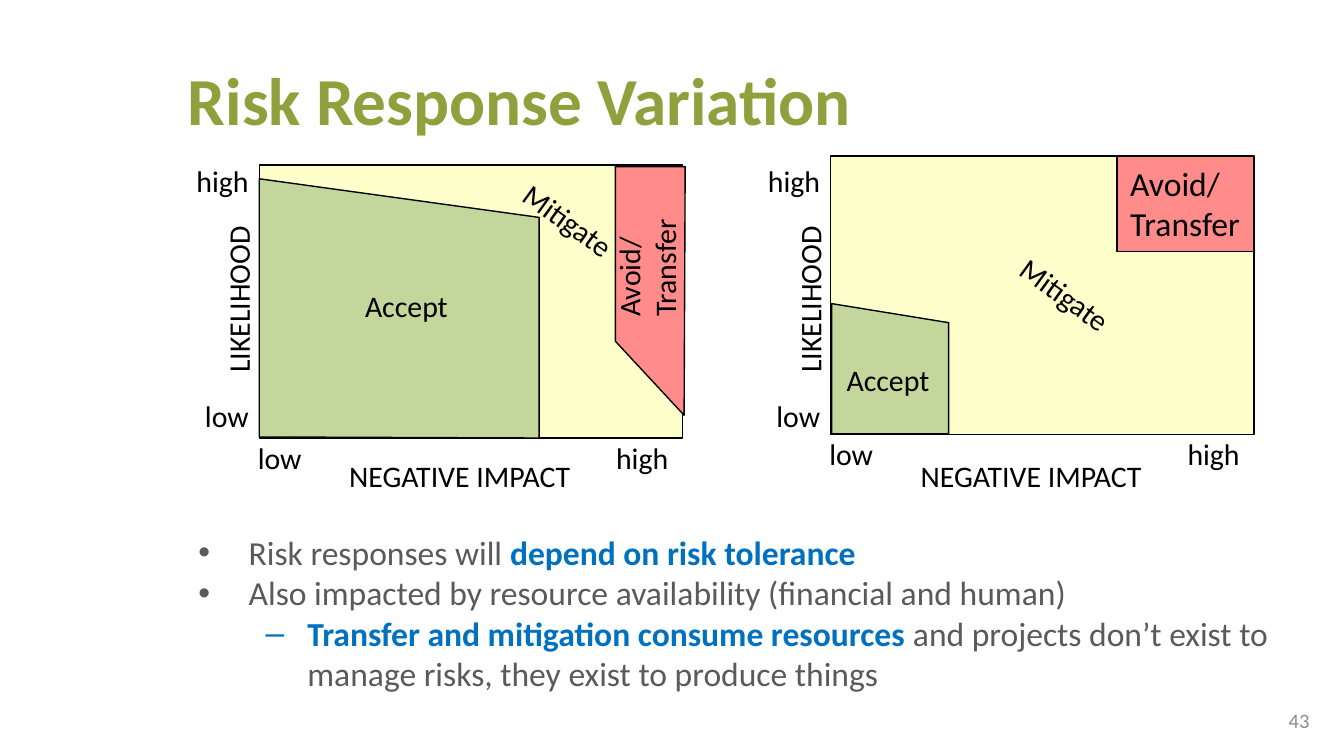
from lxml import etree
from pptx import Presentation
from pptx import util as u
from pptx.dml.color import RGBColor
from pptx.enum import shapes, text
from pptx.oxml import ns

FONT = "Calibri"
BLACK, GREY, BLUE = "000000", "5A5A5A", "0070C0"
YELLOW, GREEN, RED = "FFFFCC", "C3D69B", "FF8B8B"
LINE_HEIGHT = 0.94


def rgb(value):
    return RGBColor.from_string(value)


def style_run(run, size, color, bold=False):
    run.font.name = FONT
    run.font.size = u.Pt(size)
    run.font.bold = bold
    run.font.color.rgb = rgb(color)


def write(frame, words, size, color=BLACK, bold=False, align=text.PP_ALIGN.LEFT):
    paragraph = frame.paragraphs[0]
    paragraph.text = words
    paragraph.alignment = align
    for run in paragraph.runs:
        style_run(run, size, color, bold)


def add_box(slide, left, top, width, height):
    box = slide.shapes.add_textbox(u.Cm(left), u.Cm(top), u.Cm(width), u.Cm(height))
    box.text_frame.word_wrap = True
    return box


def add_label(slide, words, left, top, width, height=LINE_HEIGHT, turn=0,
              align=text.PP_ALIGN.LEFT):
    label = add_box(slide, left, top, width, height)
    label.rotation = turn
    label.text_frame.word_wrap = False
    label.text_frame.auto_size = text.MSO_AUTO_SIZE.SHAPE_TO_FIT_TEXT
    write(label.text_frame, words, 16, align=align)


def paint(zone, color):
    zone.shadow.inherit = False
    zone.fill.solid()
    zone.fill.fore_color.rgb = rgb(color)
    zone.line.color.rgb = rgb(BLACK)
    zone.line.width = u.Pt(0.75)


def add_rectangle(slide, color, left, top, width, height):
    zone = slide.shapes.add_shape(shapes.MSO_SHAPE.RECTANGLE, u.Cm(left),
                                  u.Cm(top), u.Cm(width), u.Cm(height))
    paint(zone, color)
    return zone


def add_polygon(slide, color, corners):
    start, *others = [(u.Cm(x), u.Cm(y)) for x, y in corners]
    builder = slide.shapes.build_freeform(*start)
    builder.add_line_segments(others, close=True)
    paint(builder.convert_to_shape(), color)


def add_matrix(slide, left, top, height):
    right_align = text.PP_ALIGN.RIGHT
    under = top + height - 0.1
    add_rectangle(slide, YELLOW, left, top, 8, height)
    add_label(slide, "LIKELIHOOD", left - 2.06, 5.16, 3.33, turn=270)
    add_label(slide, "NEGATIVE IMPACT", left + 1.45, 8.53, 4.75)
    for x, y in ((left - 1.45, 2.95), (left + 6.48, under)):
        add_label(slide, "high", x, y, 1.5, align=right_align)
    for x, y in ((left - 1.3, 7.39), (left - 0.3, under)):
        add_label(slide, "low", x, y, 1.35, align=right_align)


def add_tolerant_matrix(slide):
    add_matrix(slide, 4.9, 3.12, 5.16)
    add_polygon(slide, RED, [(12.93, 7.85), (12.95, 3.15), (11.63, 3.15), (11.63, 6.45)])
    add_polygon(slide, GREEN, [(4.9, 3.38), (10.19, 4.11), (10.19, 8.28), (4.9, 8.26)])
    add_label(slide, "Accept", 6.65, 5.31, 2.11)
    add_label(slide, "Mitigate", 9.53, 3.71, 2.44, turn=35.9)
    add_label(slide, "Avoid/\vTransfer", 11.05, 4.24, 2.36, 1.63, turn=270)


def add_averse_matrix(slide):
    add_matrix(slide, 15.7, 2.95, 5.26)
    add_polygon(slide, GREEN, [(15.72, 5.74), (17.93, 6.1), (17.93, 8.2), (15.72, 8.2)])
    add_label(slide, "Accept", 15.75, 6.71, 2.11)
    add_label(slide, "Mitigate", 18.92, 5.11, 2.44, turn=35.9)
    avoid = add_rectangle(slide, RED, 21.11, 2.95, 2.59, 1.8)
    avoid.text_frame.vertical_anchor = text.MSO_ANCHOR.TOP
    write(avoid.text_frame, "Avoid/\vTransfer", 18)


def set_bullet(paragraph, mark, indent, hanging):
    properties = paragraph._p.get_or_add_pPr()
    properties.set("marL", str(u.Cm(indent)))
    properties.set("indent", str(-u.Cm(hanging)))
    font = etree.SubElement(properties, ns.qn("a:buFont"))
    font.set("typeface", "Arial")
    bullet = etree.SubElement(properties, ns.qn("a:buChar"))
    bullet.set("char", mark)


def add_points(slide):
    points = [
        (0, [("Risk responses will ", False), ("depend on risk tolerance", True)]),
        (0, [("Also impacted by resource availability (financial and human)", False)]),
        (1, [("Transfer and mitigation consume resources ", True),
             ("and projects don’t exist to manage risks, they exist to produce things",
              False)]),
    ]
    bullets = [("•", 0.95, 0.95), ("–", 2.06, 0.79)]
    frame = add_box(slide, 3.5, 9.93, 21, 2.74).text_frame
    for index, (level, pieces) in enumerate(points):
        paragraph = frame.add_paragraph() if index else frame.paragraphs[0]
        paragraph.level = level
        set_bullet(paragraph, *bullets[level])
        for words, stressed in pieces:
            run = paragraph.add_run()
            run.text = words
            style_run(run, 18, BLUE if stressed else GREY, stressed)


def add_title(slide):
    title = add_box(slide, 3.3, 0.97, 20.62, 2.39)
    write(title.text_frame, "Risk Response Variation", 36, "90A03C", True)


def add_page_number(slide):
    number = add_box(slide, 23.5, 13.23, 1.5, 0.76)
    number.text_frame.vertical_anchor = text.MSO_ANCHOR.MIDDLE
    write(number.text_frame, "43", 11, "8C8C8C", align=text.PP_ALIGN.RIGHT)


def main():
    deck = Presentation()
    deck.slide_width, deck.slide_height = u.Cm(25.4), u.Cm(14.29)
    slide = deck.slides.add_slide(deck.slide_layouts[6])
    add_page_number(slide)
    add_tolerant_matrix(slide)
    add_averse_matrix(slide)
    add_title(slide)
    add_points(slide)
    deck.save("out.pptx")


if __name__ == "__main__":
    main()
